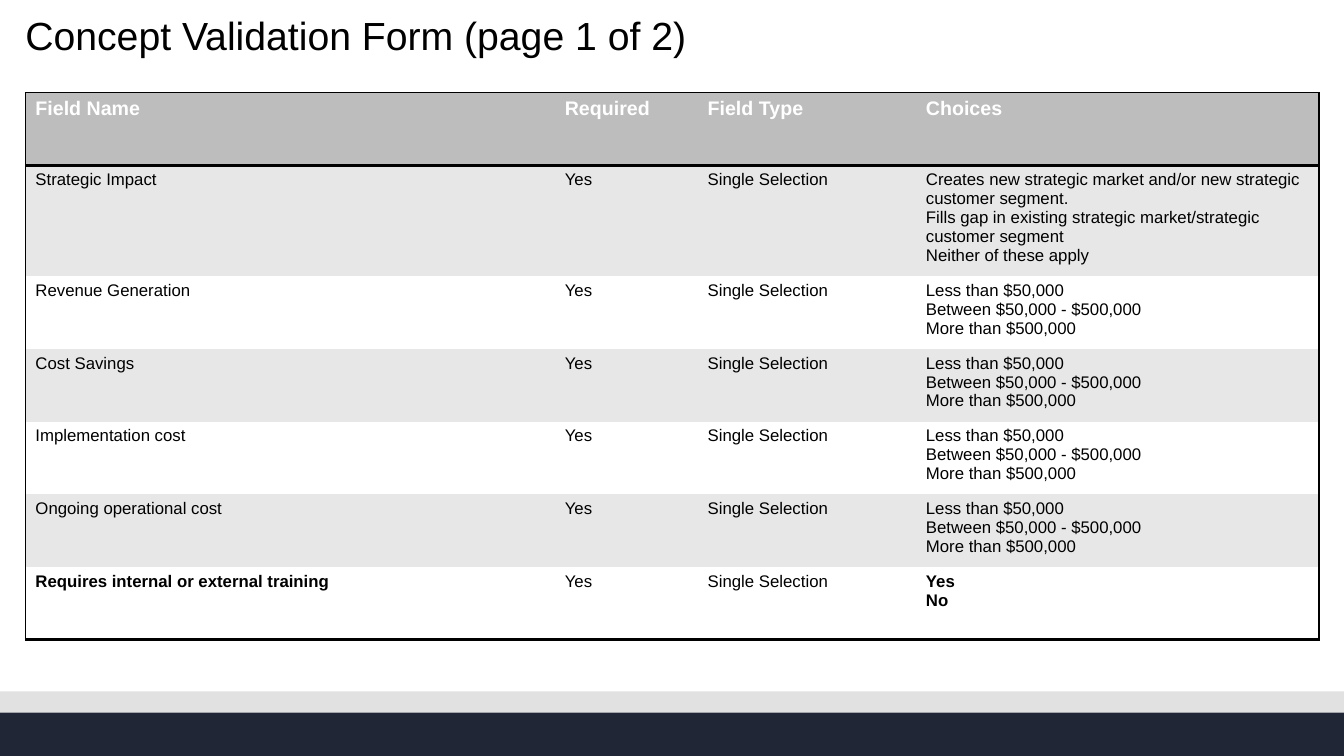
from lxml import etree
from pptx import Presentation
from pptx import util as u
from pptx.dml.color import RGBColor
from pptx.enum import shapes
from pptx.oxml import ns

BLACK = RGBColor(0x00, 0x00, 0x00)
WHITE = RGBColor(0xFF, 0xFF, 0xFF)
HEADER_GREY = RGBColor(0xBD, 0xBD, 0xBD)
BAND_GREY = RGBColor(0xE7, 0xE7, 0xE7)
STRIP_GREY = RGBColor(0xE1, 0xE1, 0xE1)
NAVY = RGBColor(0x21, 0x26, 0x37)

FONT = "Arial"
PLAIN_TABLE_STYLE = "{2D5ABB26-0587-4C30-8999-92F81FD0307C}"
SLIDE_WIDTH = u.Cm(33.87)
MARGIN = u.Cm(0.64)
COLUMN_WIDTHS = [13.34, 3.6, 5.5, 10.16]
ROW_HEIGHT = u.Cm(1.83)

HEADINGS = ["Field Name", "Required", "Field Type", "Choices"]
IMPACTS = (
    "Creates new strategic market and/or new strategic customer segment.\n"
    "Fills gap in existing strategic market/strategic customer segment\n"
    "Neither of these apply"
)
AMOUNTS = "Less than $50,000\nBetween $50,000 - $500,000\nMore than $500,000"
FIELDS = [
    ("Strategic Impact", IMPACTS),
    ("Revenue Generation", AMOUNTS),
    ("Cost Savings", AMOUNTS),
    ("Implementation cost", AMOUNTS),
    ("Ongoing operational cost", AMOUNTS),
    ("Requires internal or external training", "Yes\nNo"),
]


def style_text(frame, size, color, bold=False):
    for paragraph in frame.paragraphs:
        font = paragraph.font
        font.name, font.size, font.bold = FONT, u.Pt(size), bold
        font.color.rgb = color


def add_band(slide, top, height, color):
    band = slide.shapes.add_shape(
        shapes.MSO_SHAPE.RECTANGLE, 0, top, SLIDE_WIDTH, height)
    band.shadow.inherit = False
    band.fill.solid()
    band.fill.fore_color.rgb = color
    band.line.fill.background()


def add_title(slide, wording):
    title = slide.shapes.add_textbox(MARGIN, u.Cm(0.43), u.Cm(27.4), u.Cm(1.47))
    frame = title.text_frame
    frame.word_wrap = True
    frame.margin_left = frame.margin_right = 0
    frame.margin_top = frame.margin_bottom = 0
    frame.text = wording
    frame.paragraphs[0].line_spacing = 0.9
    style_text(frame, 28, BLACK)


def add_borders(cell, widths):
    properties = cell._tc.get_or_add_tcPr()
    for position, (side, width) in enumerate(widths.items()):
        line = etree.Element(ns.qn(f"a:ln{side}"), w=str(u.Pt(width)))
        fill = etree.SubElement(line, ns.qn("a:solidFill"))
        etree.SubElement(fill, ns.qn("a:srgbClr"), val=str(BLACK))
        properties.insert(position, line)


def fill_cell(cell, wording, background, size, color, bold):
    cell.text = wording
    cell.fill.solid()
    cell.fill.fore_color.rgb = background
    style_text(cell.text_frame, size, color, bold)


def add_form(slide):
    rows = [HEADINGS] + [
        [field, "Yes", "Single Selection", choices] for field, choices in FIELDS]
    last_row, last_column = len(rows) - 1, len(HEADINGS) - 1
    form = slide.shapes.add_table(
        len(rows), len(HEADINGS), MARGIN, u.Cm(2.34),
        u.Cm(sum(COLUMN_WIDTHS)), ROW_HEIGHT * len(rows)).table
    form._tbl.tblPr.find(ns.qn("a:tableStyleId")).text = PLAIN_TABLE_STYLE
    for column, width in zip(form.columns, COLUMN_WIDTHS):
        column.width = u.Cm(width)
    for r, row in enumerate(rows):
        form.rows[r].height = ROW_HEIGHT
        for c, wording in enumerate(row):
            cell = form.cell(r, c)
            if r == 0:
                fill_cell(cell, wording, HEADER_GREY, 14, WHITE, True)
            else:
                background = BAND_GREY if r % 2 else WHITE
                emphasis = r == last_row and c in (0, last_column)
                fill_cell(cell, wording, background, 12, BLACK, emphasis)
            borders = {}
            if c == 0:
                borders["L"] = 1
            if c == last_column:
                borders["R"] = 1
            if r == 0:
                borders["T"] = 1
            if r in (0, last_row):
                borders["B"] = 2
            add_borders(cell, borders)


def main():
    deck = Presentation()
    deck.slide_width, deck.slide_height = SLIDE_WIDTH, u.Cm(19.05)
    slide = deck.slides.add_slide(deck.slide_layouts[6])
    add_band(slide, u.Cm(17.42), u.Cm(0.54), STRIP_GREY)
    add_band(slide, u.Cm(17.96), u.Cm(1.09), NAVY)
    add_title(slide, "Concept Validation Form (page 1 of 2)")
    add_form(slide)
    deck.save("out.pptx")


if __name__ == "__main__":
    main()
